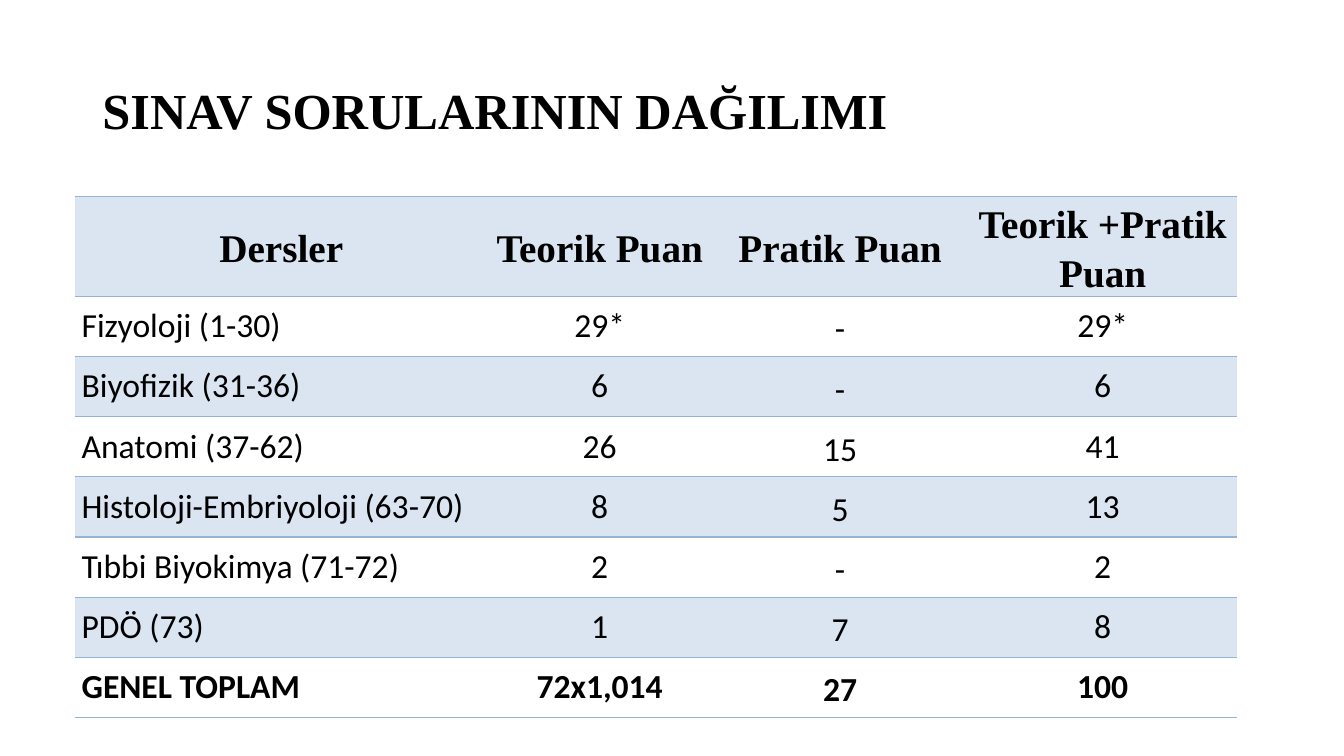
from lxml import etree
from pptx import Presentation
from pptx import util as u
from pptx.dml import color
from pptx.enum import text
from pptx.oxml import ns

BLACK, BAND, RULE = "000000", "DBE5F1", "95B3D7"
SERIF, SANS = "Times New Roman", "Calibri"

HEADINGS = ["Dersler", "Teorik Puan", "Pratik Puan", "Teorik +Pratik Puan"]
SCORES = [
    ["Fizyoloji (1-30)", "29*", "-", "29*"],
    ["Biyofizik (31-36)", "6", "-", "6"],
    ["Anatomi (37-62)", "26", "15", "41"],
    ["Histoloji-Embriyoloji (63-70)", "8", "5", "13"],
    ["Tıbbi Biyokimya (71-72)", "2", "-", "2"],
    ["PDÖ (73)", "1", "7", "8"],
    ["GENEL TOPLAM", "72x1,014", "27", "100"],
]
COLUMN_WIDTHS = [295.2, 159.8, 183.6, 191.6]
HEADER_HEIGHT, ROW_HEIGHT = 65.5, 43
PRACTICAL_COLUMN = 2


def rgb(value):
    return color.RGBColor.from_string(value)


def format_text(text_frame, font_name, size, bold, align, spacing):
    paragraph = text_frame.paragraphs[0]
    paragraph.alignment = align
    paragraph.line_spacing = spacing
    font = paragraph.runs[0].font
    font.name, font.size, font.bold = font_name, u.Pt(size), bold
    font.color.rgb = rgb(BLACK)


def set_borders(cell):
    """Rule the top and bottom of a cell and leave its sides open."""
    properties = cell._tc.get_or_add_tcPr()
    for side in ("L", "R", "T", "B"):
        line = etree.SubElement(properties, ns.qn(f"a:ln{side}"), w=str(u.Pt(1)))
        if side in "LR":
            etree.SubElement(line, ns.qn("a:noFill"))
        else:
            fill = etree.SubElement(line, ns.qn("a:solidFill"))
            etree.SubElement(fill, ns.qn("a:srgbClr"), val=RULE)


def add_title(slide, left, top, width, height):
    title = slide.shapes.title
    title.left, title.top = u.Pt(left), u.Pt(top)
    title.width, title.height = u.Pt(width), u.Pt(height)
    frame = title.text_frame
    frame.text = "SINAV SORULARININ DAĞILIMI"
    frame.auto_size = text.MSO_AUTO_SIZE.NONE
    frame.vertical_anchor = text.MSO_ANCHOR.MIDDLE
    format_text(frame, SERIF, 36, True, text.PP_ALIGN.LEFT, 0.9)


def fill_cell(cell, content, row, column):
    # Text
    cell.text = content
    cell.vertical_anchor = text.MSO_ANCHOR.MIDDLE
    cell.margin_left = cell.margin_right = u.Pt(5)
    cell.margin_top = cell.margin_bottom = 0
    header, total = row == 0, row == len(SCORES)
    left_aligned = column == 0 and not header
    format_text(
        cell.text_frame,
        SERIF if header else SANS,
        28 if header else 24,
        header or total,
        text.PP_ALIGN.LEFT if left_aligned else text.PP_ALIGN.CENTER,
        1.15 if header or column == PRACTICAL_COLUMN else 1.0,
    )
    # Rules and banding
    set_borders(cell)
    if row % 2 == 0:
        cell.fill.solid()
        cell.fill.fore_color.rgb = rgb(BAND)
    else:
        cell.fill.background()


def add_score_table(slide, left, top):
    rows = [HEADINGS] + SCORES
    heights = [HEADER_HEIGHT] + [ROW_HEIGHT] * len(SCORES)
    table = slide.shapes.add_table(
        len(rows), len(HEADINGS), u.Pt(left), u.Pt(top),
        u.Pt(sum(COLUMN_WIDTHS)), u.Pt(sum(heights)),
    ).table
    table.first_row = table.horz_banding = False
    for column, width in zip(table.columns, COLUMN_WIDTHS):
        column.width = u.Pt(width)
    for row_index, (contents, height) in enumerate(zip(rows, heights)):
        table.rows[row_index].height = u.Pt(height)
        for column_index, content in enumerate(contents):
            cell = table.cell(row_index, column_index)
            fill_cell(cell, content, row_index, column_index)


def main():
    presentation = Presentation()
    presentation.slide_width, presentation.slide_height = u.Pt(960), u.Pt(540)
    title_only = presentation.slide_layouts[5]
    slide = presentation.slides.add_slide(title_only)
    add_title(slide, 66, 28.8, 828, 104.4)
    add_score_table(slide, 53.3, 140.4)
    presentation.save("out.pptx")


if __name__ == "__main__":
    main()
